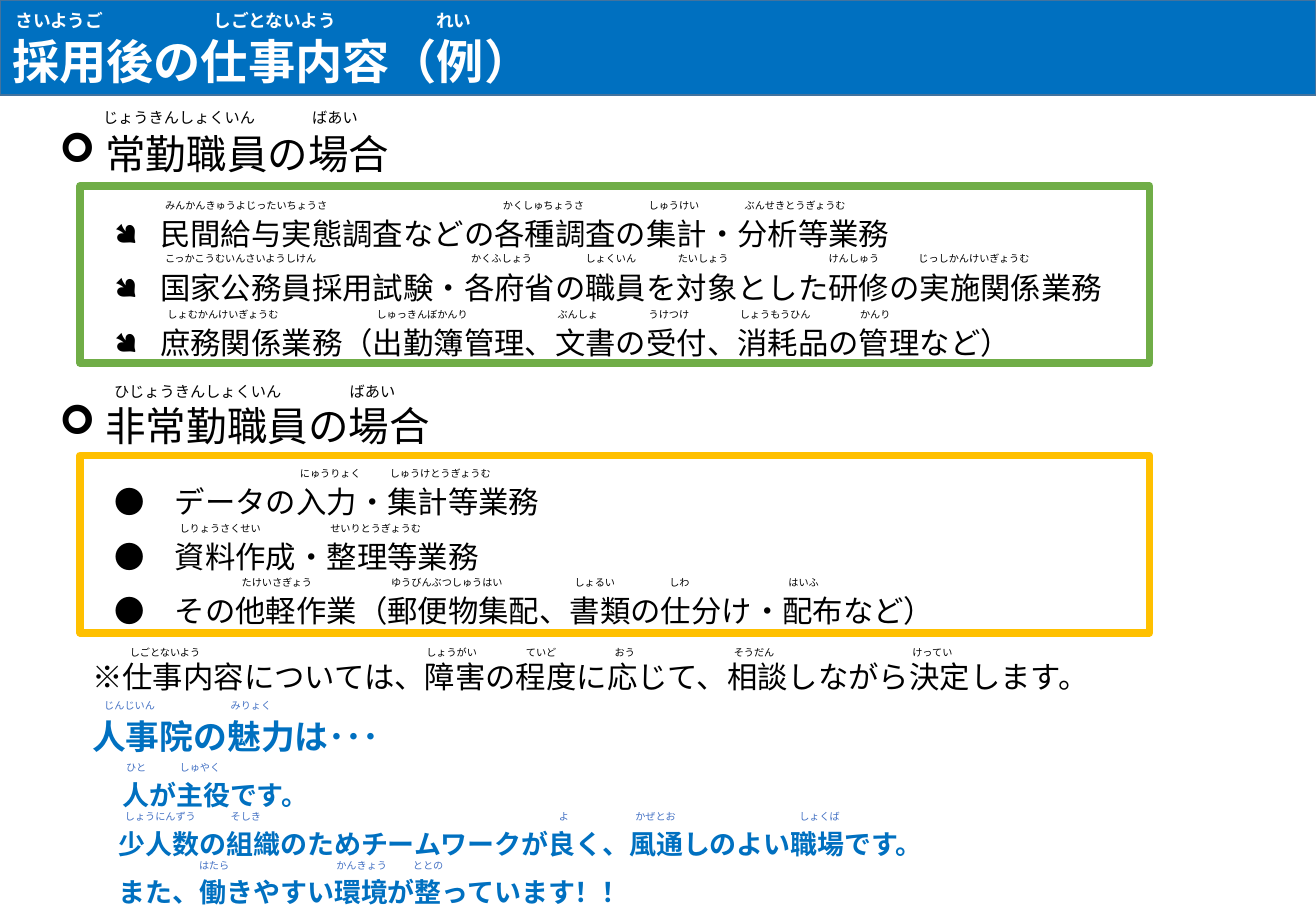
from lxml.etree import SubElement
from pptx import Presentation
from pptx.dml.color import RGBColor
from pptx.enum.shapes import MSO_SHAPE
from pptx.enum.text import MSO_ANCHOR, MSO_AUTO_SIZE, PP_ALIGN
from pptx.oxml.ns import qn
from pptx.util import Inches, Pt

FONT = "Noto Sans CJK JP"
COLORS = {"black": "000000", "white": "FFFFFF", "blue": "0070C0", "edge": "43739E",
          "reading": "4472C4", "green": "70AD47", "amber": "FFC000"}
CELL = 0.1  # inches per grid column and row
COLUMNS, ROWS = 108.3, 75


def grid(*cells):
    return [Inches(cell * CELL) for cell in cells]


def rgb(color):
    return RGBColor.from_string(COLORS[color])


class JobSlide:
    """Style and current slide; every place is in grid cells."""

    def __init__(self, deck):
        self.slide = deck.slides.add_slide(deck.slide_layouts[5])

    def add_words(self, paragraph, text, size, color, bold):
        run = paragraph.add_run()
        run.text = text
        for name, value in {"size": Pt(size), "bold": bold, "name": FONT}.items():
            setattr(run.font, name, value)
        run.font.color.rgb = rgb(color)
        SubElement(run._r.get_or_add_rPr(), qn("a:ea"), typeface=FONT)

    def bullet(self, paragraph, symbol):
        properties = paragraph._p.get_or_add_pPr()
        indent = Inches(0.38)
        properties.set("marL", str(indent))
        properties.set("indent", str(-indent))
        SubElement(properties, qn("a:buFont"), typeface="Wingdings")
        SubElement(properties, qn("a:buChar"), char=symbol)

    def title(self, place, text, size):
        band = self.slide.shapes.title
        for name, value in zip(("left", "top", "width", "height"), grid(*place)):
            setattr(band, name, value)
        band.fill.solid()
        band.fill.fore_color.rgb = rgb("blue")
        band.line.color.rgb = rgb("edge")
        band.line.width = Pt(1)
        frame = band.text_frame
        for name, value in {"vertical_anchor": MSO_ANCHOR.BOTTOM, "word_wrap": True,
                            "auto_size": MSO_AUTO_SIZE.NONE}.items():
            setattr(frame, name, value)
        heading = frame.paragraphs[0]
        heading.alignment = PP_ALIGN.LEFT
        heading.line_spacing = 1.0
        self.add_words(heading, text, size, "white", True)

    def text(self, place, lines, size, color="black", bold=False,
             symbol=None, spacing=None, align=PP_ALIGN.LEFT):
        frame = self.slide.shapes.add_textbox(*grid(*place)).text_frame
        frame.word_wrap = True
        frame.auto_size = MSO_AUTO_SIZE.SHAPE_TO_FIT_TEXT
        for number, line in enumerate(lines):
            paragraph = frame.add_paragraph() if number else frame.paragraphs[0]
            paragraph.alignment = align
            paragraph.line_spacing = spacing
            if symbol:
                self.bullet(paragraph, symbol)
            runs = [(line, size)] if isinstance(line, str) else line
            for words, run_size in runs:
                self.add_words(paragraph, words, run_size, color, bold)

    def frame(self, place, color):
        border = self.slide.shapes.add_shape(MSO_SHAPE.RECTANGLE, *grid(*place))
        border.shadow.inherit = False
        border.fill.background()
        border.line.color.rgb = rgb(color)
        border.line.width = Pt(4.5)

    def readings(self, top, words, size=6, color="black", bold=False):
        height = {6: 2, 9: 2.5, 10.5: 2.8}[size]
        for left, width, word in words:
            self.text((left, top, width, height), [word], size, color, bold,
                      align=PP_ALIGN.JUSTIFY)


# Readings above the words: top row, then left, width and text of each
BODY_READINGS = [
    (15.9, [(12.6, 21.1, "みんかんきゅうよじったいちょうさ"), (40.4, 10.8, "かくしゅちょうさ"),
            (52.4, 6.5, "しゅうけい"), (60.3, 13.8, "ぶんせきとうぎょうむ")]),
    (20.3, [(12.6, 23.5, "こっかこうむいんさいようしけん"), (37.8, 8.3, "かくふしょう"),
            (47.2, 6.5, "しょくいん"), (54.8, 6.4, "たいしょう"),
            (67.2, 6.9, "けんしゅう"), (74.6, 16.5, "じっしかんけいぎょうむ")]),
    (24.9, [(12.8, 16.1, "しょむかんけいぎょうむ"), (30, 13.8, "しゅっきんぼかんり"),
            (44.9, 6.2, "ぶんしょ"), (52.4, 6.7, "うけつけ"),
            (59.9, 9.1, "しょうもうひん"), (69.8, 6.2, "かんり")]),
    (38, [(23.7, 7.1, "にゅうりょく"), (31.1, 14.3, "しゅうけとうぎょうむ")]),
    (42.5, [(13.8, 11.6, "しりょうさくせい"), (26.2, 13, "せいりとうぎょうむ")]),
    (47, [(18.9, 11.2, "たけいさぎょう"), (31.2, 13.8, "ゆうびんぶつしゅうはい"),
          (46.3, 6.1, "しょるい"), (54.1, 5, "しわ"), (63.9, 5.9, "はいふ")]),
    (52.7, [(9.7, 11.2, "しごとないよう"), (34.1, 7, "しょうがい"), (42.3, 5.6, "ていど"),
            (49.6, 3.9, "おう"), (59.4, 6.5, "そうだん"), (74.1, 6.5, "けってい")]),
]
APPEAL_READINGS = [
    (57.1, [(7.6, 9, "じんじいん"), (18, 6.7, "みりょく")]),
    (62.2, [(9.4, 3.8, "ひと"), (13.8, 5.8, "しゅやく")]),
    (66.2, [(9.3, 8, "しょうにんずう"), (18, 5.5, "そしき"), (45, 2.2, "よ"),
            (51.3, 6, "かぜとお"), (64.8, 5.4, "しょくば")]),
    (70.3, [(15.4, 5, "はたら"), (26.7, 6.6, "かんきょう"), (33, 4.9, "ととの")]),
]


def main():
    deck = Presentation()
    deck.slide_width, deck.slide_height = grid(COLUMNS, ROWS)
    jobs = JobSlide(deck)

    # Title band
    jobs.title((0, 0, COLUMNS, 7.8), "採用後の仕事内容（例）", 28)
    jobs.readings(0.3, [(0.3, 12.7, "さいようご"), (16.6, 16.2, "しごとないよう"),
                        (34.9, 5.9, "れい")], 10.5, "white", True)

    # Full-time staff
    jobs.text((3.9, 10.1, 54.3, 5), ["常勤職員の場合"], 24, symbol="➢")
    jobs.readings(8.4, [(7.5, 16, "じょうきんしょくいん"), (24.7, 7.2, "ばあい")], 9)
    jobs.text((8.4, 15.7, 94.2, 14.6), [
        "民間給与実態調査などの各種調査の集計・分析等業務",
        "国家公務員採用試験・各府省の職員を対象とした研修の実施関係業務",
        "庶務関係業務（出勤簿管理、文書の受付、消耗品の管理など）",
    ], 18, symbol="●", spacing=1.5)
    jobs.frame((6.6, 15.3, 88, 14.6), "green")

    # Part-time staff
    jobs.text((3.9, 32.5, 35.4, 5), ["非常勤職員の場合"], 24, symbol="➢")
    jobs.readings(31, [(8.4, 17.9, "ひじょうきんしょくいん"), (27.8, 7.4, "ばあい")], 9)
    jobs.text((8.4, 37.8, 94.2, 14.6), [
        "●　データの入力・集計等業務",
        "●　資料作成・整理等業務",
        "●　その他軽作業（郵便物集配、書類の仕分け・配布など）",
    ], 18, spacing=1.5)
    jobs.frame((6.6, 37.5, 88, 14.6), "amber")

    # Note and appeal of the workplace
    jobs.text((6.6, 53.7, 90.8, 4),
              ["※仕事内容については、障害の程度に応じて、相談しながら決定します。"], 18)
    jobs.text((6.6, 56.8, 97.7, 18.7), [
        [("人事院の魅力は･･･", 20)],
        [("　", 18), ("人が主役です。", 16)],
        "　少人数の組織のためチームワークが良く、風通しのよい職場です。",
        "　また、働きやすい環境が整っています！！",
    ], 16, "blue", True, spacing=1.5)

    # Readings of the body text
    for top, words in BODY_READINGS:
        jobs.readings(top, words)
    for top, words in APPEAL_READINGS:
        jobs.readings(top, words, color="reading")

    deck.save("out.pptx")


if __name__ == "__main__":
    main()
